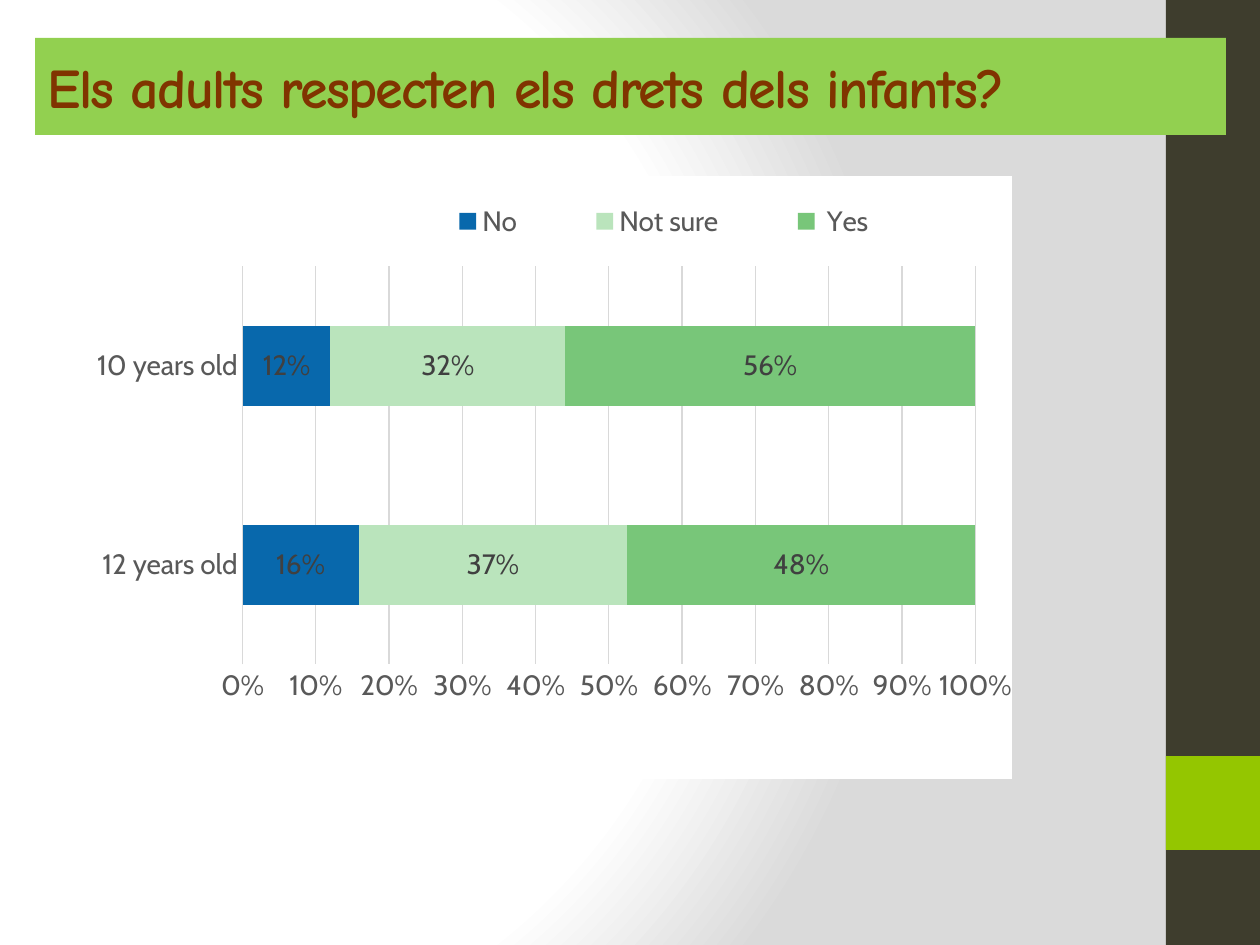
import pptx
import pptx.chart.data
import pptx.dml.color
import pptx.enum.chart
import pptx.enum.shapes
import pptx.enum.text
import pptx.oxml
import pptx.oxml.ns
import pptx.util

TITLE = "Els adults respecten els drets dels infants?"
CATEGORIES = ["12 years old", "10 years old"]
SERIES = [
    ("No", (0.16, 0.12), "0868AC"),
    ("Not sure", (0.37, 0.32), "BAE4BC"),
    (" Yes", (0.48, 0.56), "78C679"),
]

THEME = {
    "title_font": "Comic Neue", "title_size": 32, "title": "803400", "title_band": "92D050",
    "chart_font": "Cabin", "chart_size": 16, "axis": "595959", "label": "404040",
    "grid": "D9D9D9", "panel": "FFFFFF", "sidebar": "3E3D2D", "accent": "94C600",
    "background": [(0, "FFFFFF"), (75, "FFFFFF"), (100, "DADADA")],
}

# Boxes in px: left, top, width, height
SLIDE_SIZE = (1260, 945)
TITLE_BOX = (35, 38, 1191, 97)
CHART_BOX = (96, 176, 916, 603)
BANDS = [((1166, 0, 94, 945), "sidebar"), ((1166, 756, 94, 94), "accent")]

# Fractions of the chart: left, top, width, height
PLOT_AREA = (0.16, 0.15, 0.8, 0.66)
LEGEND_AREA = (0.32, 0.03, 0.6, 0.09)

NAMESPACES = pptx.oxml.ns.nsdecls("a", "c", "p")


def px(value):
    return pptx.util.Emu(round(value * 914400 / 126))


def rgb(value):
    return pptx.dml.color.RGBColor.from_string(value)


def format_font(font, *, name, size, color, bold=False):
    font.name = name
    font.size = pptx.util.Pt(size)
    font.color.rgb = rgb(color)
    font.bold = bold


def chart_text(font, color):
    format_font(font, name=THEME["chart_font"], size=THEME["chart_size"], color=THEME[color])


def write_text(shape, text, *, spacing=0, **font_format):
    """Fill a shape with one left-aligned, vertically centred line."""
    frame = shape.text_frame
    frame.word_wrap = True
    frame.auto_size = pptx.enum.text.MSO_AUTO_SIZE.NONE
    frame.vertical_anchor = pptx.enum.text.MSO_ANCHOR.MIDDLE
    paragraph = frame.paragraphs[0]
    paragraph.alignment = pptx.enum.text.PP_ALIGN.LEFT
    run = paragraph.add_run()
    run.text = text
    format_font(run.font, **font_format)
    run.font._element.set("spc", str(spacing * 100))


def set_background(slide):
    """Circular gradient centred towards the left side."""
    stops = "".join(
        f'<a:gs pos="{position * 1000}"><a:srgbClr val="{color}"/></a:gs>'
        for position, color in THEME["background"]
    )
    background = pptx.oxml.parse_xml(
        f'<p:bg {NAMESPACES}><p:bgPr><a:gradFill rotWithShape="1"><a:gsLst>{stops}</a:gsLst>'
        '<a:path path="circle"><a:fillToRect l="20000" t="50000" r="100000" b="50000"/></a:path>'
        "</a:gradFill><a:effectLst/></p:bgPr></p:bg>"
    )
    slide._element.cSld.insert(0, background)


def add_band(slide, box, color):
    shape = slide.shapes.add_shape(pptx.enum.shapes.MSO_SHAPE.RECTANGLE, *map(px, box))
    shape.shadow.inherit = False
    shape.fill.solid()
    shape.fill.fore_color.rgb = rgb(THEME[color])
    shape.line.fill.background()


def format_title(slide):
    title = slide.shapes.title
    title.left, title.top, title.width, title.height = map(px, TITLE_BOX)
    title.fill.solid()
    title.fill.fore_color.rgb = rgb(THEME["title_band"])
    write_text(title, TITLE, name=THEME["title_font"], size=THEME["title_size"],
               color=THEME["title"], bold=True, spacing=-1)
    slide.shapes._spTree.append(title._element)  # in front of the sidebar


def manual_layout(area, inner=False):
    target = '<c:layoutTarget val="inner"/>' if inner else ""
    modes = '<c:xMode val="edge"/><c:yMode val="edge"/>'
    sizes = "".join(f'<c:{key} val="{value}"/>' for key, value in zip("xywh", area))
    return pptx.oxml.parse_xml(
        f"<c:layout {NAMESPACES}><c:manualLayout>{target}{modes}{sizes}</c:manualLayout></c:layout>"
    )


def replace_layout(parent, layout, index):
    for old in parent.findall(pptx.oxml.ns.qn("c:layout")):
        parent.remove(old)
    parent.insert(index, layout)


def format_axes(chart):
    no_ticks = pptx.enum.chart.XL_TICK_MARK.NONE
    category_axis, value_axis = chart.category_axis, chart.value_axis
    for axis in (category_axis, value_axis):
        axis.major_tick_mark = axis.minor_tick_mark = no_ticks
        chart_text(axis.tick_labels.font, "axis")
    value_axis.minimum_scale, value_axis.maximum_scale, value_axis.major_unit = 0, 1, 0.1
    value_axis.tick_labels.number_format = "0%"
    value_axis.tick_labels.number_format_is_linked = False
    value_axis.format.line.fill.background()
    value_axis.has_major_gridlines = True
    for line in (category_axis.format.line, value_axis.major_gridlines.format.line):
        line.color.rgb = rgb(THEME["grid"])
        line.width = pptx.util.Pt(0.75)


def add_survey_chart(slide):
    data = pptx.chart.data.CategoryChartData(number_format="0%")
    data.categories = CATEGORIES
    for name, values, _ in SERIES:
        data.add_series(name, values)
    chart = slide.shapes.add_chart(
        pptx.enum.chart.XL_CHART_TYPE.BAR_STACKED_100, *map(px, CHART_BOX), data
    ).chart
    chart.has_title = False
    chart_text(chart.font, "axis")
    format_axes(chart)

    plot = chart.plots[0]
    plot.gap_width, plot.overlap, plot.vary_by_categories = 150, 100, False
    for series, (_, _, color) in zip(plot.series, SERIES):
        series.format.fill.solid()
        series.format.fill.fore_color.rgb = rgb(color)
        labels = series.data_labels
        labels.show_value = True
        labels.number_format = "0%"
        labels.number_format_is_linked = False
        chart_text(labels.font, "label")

    chart.has_legend = True
    chart.legend.position = pptx.enum.chart.XL_LEGEND_POSITION.TOP
    chart.legend.include_in_layout = False
    chart_text(chart.legend.font, "axis")

    chart_space = chart._chartSpace
    replace_layout(chart_space.chart.plotArea, manual_layout(PLOT_AREA, inner=True), 0)
    replace_layout(chart.legend._element, manual_layout(LEGEND_AREA), 1)
    chart_space.chart.addnext(pptx.oxml.parse_xml(
        f'<c:spPr {NAMESPACES}><a:solidFill><a:srgbClr val="{THEME["panel"]}"/></a:solidFill>'
        "<a:ln><a:noFill/></a:ln></c:spPr>"
    ))


def main():
    presentation = pptx.Presentation()
    presentation.slide_width, presentation.slide_height = map(px, SLIDE_SIZE)
    slide = presentation.slides.add_slide(presentation.slide_layouts[5])
    set_background(slide)
    for box, color in BANDS:
        add_band(slide, box, color)
    format_title(slide)
    add_survey_chart(slide)
    presentation.save("out.pptx")


if __name__ == "__main__":
    main()
